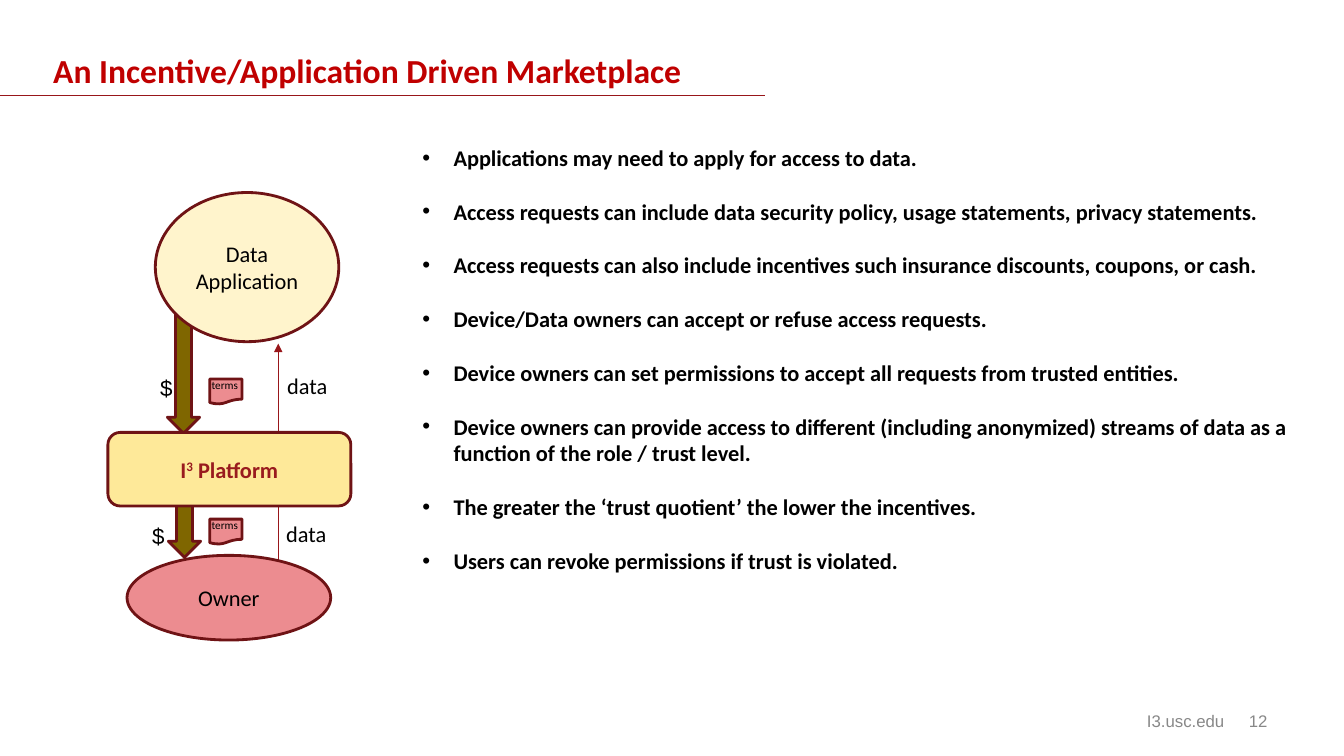
from dataclasses import dataclass, field

from lxml import etree
from pptx import Presentation
from pptx.dml.color import RGBColor
from pptx.enum.shapes import MSO_CONNECTOR as Connector, MSO_SHAPE as Preset
from pptx.enum.text import MSO_ANCHOR as Anchor, PP_ALIGN as Align
from pptx.oxml.ns import qn
from pptx.slide import Slide
from pptx.util import Inches, Pt

BLACK, GREY, TITLE_RED = "000000", "888888", "C00000"
OUTLINE, CRIMSON, PLATFORM_RED = "6F1315", "98161A", "991B1E"
OLIVE, PINK, YELLOW, CREAM = "7F6600", "EC8C90", "FEE999", "FFF4CC"

BULLETS = [
    "Applications may need to apply for access to data.",
    "Access requests can include data security policy, usage statements, privacy statements.",
    "Access requests can also include incentives such insurance discounts, coupons, or cash.",
    "Device/Data owners can accept or refuse access requests.",
    "Device owners can set permissions to accept all requests from trusted entities.",
    "Device owners can provide access to different (including anonymized) streams of data"
    " as a function of the role / trust level.",
    "The greater the ‘trust quotient’ the lower the incentives.",
    "Users can revoke permissions if trust is violated.",
]


@dataclass
class Style:
    size: float = 16
    name: str = "Calibri"
    color: str = BLACK
    bold: bool = False


@dataclass
class Node:
    preset: Preset
    box: tuple[float, float, float, float]
    fill: str
    runs: tuple[str, ...] = ()  # every second run is superscript
    style: Style = field(default_factory=Style)


@dataclass
class Label:
    text: str
    box: tuple[float, float, float, float]
    style: Style = field(default_factory=Style)
    align: Align = Align.LEFT
    anchor: Anchor = Anchor.TOP
    wrap: bool = False


def rgb(value: str) -> RGBColor:
    return RGBColor.from_string(value)


def apply_style(font, style: Style) -> None:
    values = {"size": Pt(style.size), "name": style.name, "bold": style.bold}
    for key, value in values.items():
        setattr(font, key, value)
    font.color.rgb = rgb(style.color)


def draw_node(slide: Slide, node: Node) -> None:
    shape = slide.shapes.add_shape(node.preset, *map(Inches, node.box))
    shape.shadow.inherit = False
    shape.fill.solid()
    shape.fill.fore_color.rgb = rgb(node.fill)
    shape.line.color.rgb = rgb(OUTLINE)
    shape.line.width = Pt(2)
    frame = shape.text_frame
    frame.vertical_anchor = Anchor.MIDDLE
    paragraph = frame.paragraphs[0]
    paragraph.alignment = Align.CENTER
    for index, text in enumerate(node.runs):
        run = paragraph.add_run()
        run.text = text
        apply_style(run.font, node.style)
        if index % 2:
            run.font._element.set("baseline", "30000")


def draw_label(slide: Slide, label: Label) -> None:
    frame = slide.shapes.add_textbox(*map(Inches, label.box)).text_frame
    frame.word_wrap = label.wrap
    frame.vertical_anchor = label.anchor
    paragraph = frame.paragraphs[0]
    paragraph.alignment = label.align
    run = paragraph.add_run()
    run.text = label.text
    apply_style(run.font, label.style)


def draw_line(slide: Slide, start: tuple[float, float], end: tuple[float, float],
              arrow_at_start: bool = False) -> None:
    line = slide.shapes.add_connector(Connector.STRAIGHT, *map(Inches, start + end))
    line.line.color.rgb = rgb(CRIMSON)
    line.line.width = Pt(0.75)
    if arrow_at_start:
        etree.SubElement(line.line._get_or_add_ln(), qn("a:headEnd"), type="triangle")
    etree.SubElement(line._element.spPr, qn("a:effectLst"))


def draw_bullets(slide: Slide, texts: list[str]) -> None:
    frame = slide.shapes.add_textbox(*map(Inches, (4.09, 1.38, 8.94, 5.51))).text_frame
    frame.word_wrap = True
    for index, text in enumerate(texts):
        paragraph = frame.add_paragraph() if index else frame.paragraphs[0]
        properties = paragraph._p.get_or_add_pPr()
        properties.set("marL", str(Inches(0.31)))
        properties.set("indent", str(Inches(-0.31)))
        bullet_color = etree.SubElement(properties, qn("a:buClr"))
        etree.SubElement(bullet_color, qn("a:srgbClr"), val=BLACK)
        etree.SubElement(properties, qn("a:buFont"), typeface="Arial")
        etree.SubElement(properties, qn("a:buChar"), char="•")
        if index:
            paragraph.space_before = Pt(19.2)
        run = paragraph.add_run()
        run.text = text
        apply_style(run.font, Style(bold=True))


def main() -> None:
    deck = Presentation()
    deck.slide_width, deck.slide_height = Inches(13.33), Inches(7.5)
    slide = deck.slides.add_slide(deck.slide_layouts[6])

    # Title and its rule
    draw_label(slide, Label("An Incentive/Application Driven Marketplace", (0.43, 0.47, 11.33, 0.45),
                            Style(24, color=TITLE_RED, bold=True), anchor=Anchor.MIDDLE, wrap=True))
    draw_line(slide, (0, 0.95), (7.59, 0.95))

    # Marketplace flow, back to front
    draw_node(slide, Node(Preset.DOWN_ARROW, (1.67, 4.3, 0.32, 1.23), OLIVE))
    draw_line(slide, (2.76, 3.41), (2.76, 5.67), arrow_at_start=True)
    front_nodes = [
        Node(Preset.OVAL, (1.26, 5.51, 2.02, 0.84), PINK, ("Owner",)),
        Node(Preset.DOWN_ARROW, (1.66, 3.07, 0.32, 1.23), OLIVE),
        Node(Preset.ROUNDED_RECTANGLE, (1.07, 4.29, 2.41, 0.73), YELLOW,
             ("I", "3", " Platform"), Style(color=PLATFORM_RED, bold=True)),
        Node(Preset.OVAL, (1.54, 1.91, 1.82, 1.48), CREAM, ("Data Application",)),
    ]
    for node in front_nodes:
        draw_node(slide, node)

    # Exchange of money, terms and data on each side of the platform
    for top, money_left, data_left in ((3.64, 1.49, 2.75), (5.11, 1.41, 2.74)):
        terms_top = 3.7 if top < 4 else 5.09
        draw_node(slide, Node(Preset.FLOWCHART_DOCUMENT, (2.08, terms_top + 0.06, 0.32, 0.25), PINK))
        draw_label(slide, Label("$", (money_left, top + 0.02, 0.33, 0.37), Style(name="Arial")))
        draw_label(slide, Label("data", (data_left, top, 0.6, 0.37)))
        draw_label(slide, Label("terms", (2, terms_top, 0.48, 0.24), Style(8)))

    # Access rules
    draw_bullets(slide, BULLETS)

    # Footer
    footer = Style(12, "Arial", GREY)
    draw_label(slide, Label("I3.usc.edu", (9.65, 6.95, 4.22, 0.4), footer,
                            Align.CENTER, Anchor.MIDDLE, True))
    draw_label(slide, Label("12", (9.56, 6.95, 3.11, 0.4), footer,
                            Align.RIGHT, Anchor.MIDDLE, True))

    deck.save("out.pptx")


if __name__ == "__main__":
    main()
